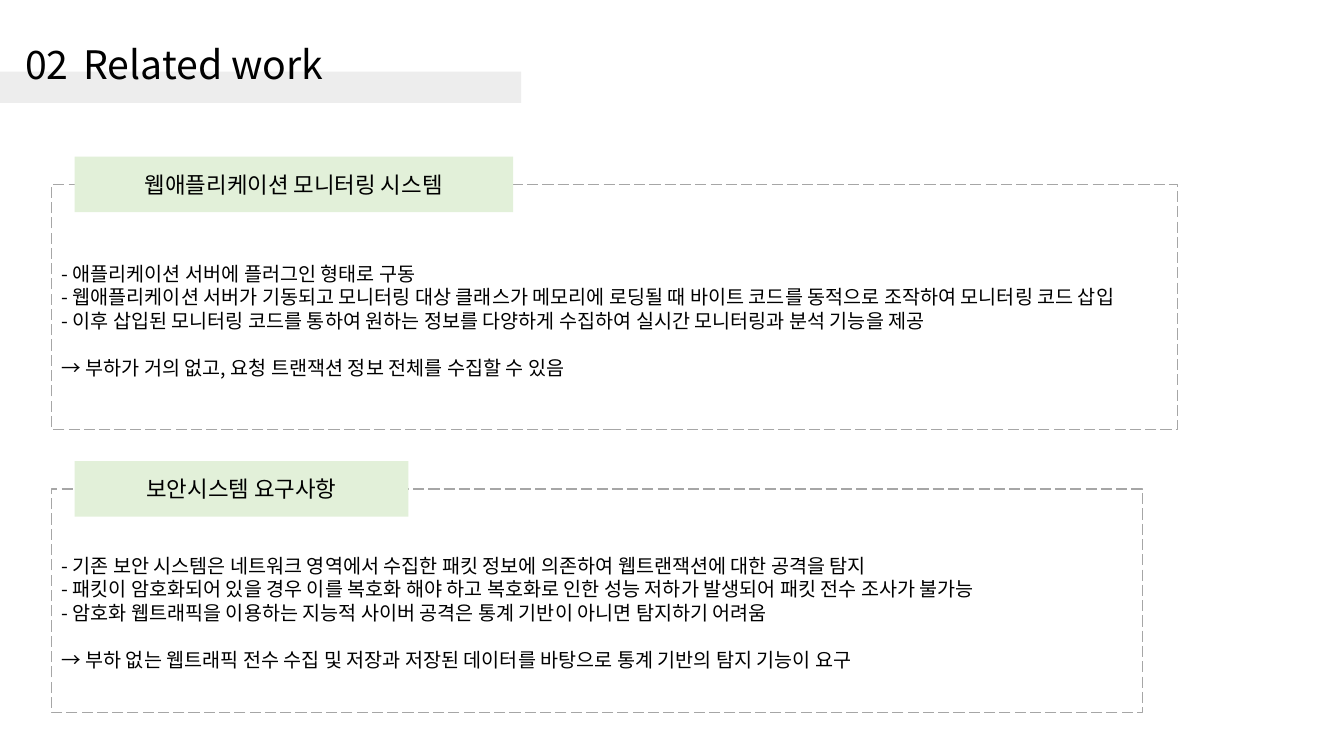
"""Build the related work slide with two labelled, dashed frames."""
from dataclasses import dataclass

import lxml.etree
import pptx
import pptx.dml.color
import pptx.enum.dml
import pptx.enum.shapes
import pptx.enum.text
import pptx.oxml.ns
import pptx.util


@dataclass(frozen=True)
class Theme:
    font: str = "Noto Sans CJK KR"
    text: str = "000000"
    bar: str = "EDEDED"
    label: str = "E2F0D9"
    frame: str = "A6A6A6"
    title_size: float = 28
    label_size: float = 16
    body_size: float = 14
    body_pitch: float = 16.8


@dataclass(frozen=True)
class Area:
    """Left, top, width and height in percent of the slide's size."""
    left: float
    top: float
    width: float
    height: float


@dataclass(frozen=True)
class Section:
    heading: str
    label_width: float
    frame: Area
    top_inset: float
    points: tuple[str, ...]
    conclusion: str


THEME = Theme()
SLIDE_WIDTH = pptx.util.Inches(13.33)
SLIDE_HEIGHT = pptx.util.Inches(7.5)
FRAME_LEFT = 3.83
LABEL_LEFT = 5.55
LABEL_HEIGHT = 7.33
TITLE_TAB = pptx.util.Inches(0.58)

SECTIONS = (
    Section(
        "웹애플리케이션 모니터링 시스템", 32.63, Area(FRAME_LEFT, 24.4, 83.8, 32.4), 0.32,
        (
            "- 애플리케이션 서버에 플러그인 형태로 구동",
            "- 웹애플리케이션 서버가 기동되고 모니터링 대상 클래스가 메모리에 로딩될 때 "
            "바이트 코드를 동적으로 조작하여 모니터링 코드 삽입",
            "- 이후 삽입된 모니터링 코드를 통하여 원하는 정보를 다양하게 수집하여 "
            "실시간 모니터링과 분석 기능을 제공",
        ),
        "→ 부하가 거의 없고, 요청 트랜잭션 정보 전체를 수집할 수 있음",
    ),
    Section(
        "보안시스템 요구사항", 24.83, Area(FRAME_LEFT, 64.67, 81.17, 29.6), 0.28,
        (
            "- 기존 보안 시스템은 네트워크 영역에서 수집한 패킷 정보에 의존하여 "
            "웹트랜잭션에 대한 공격을 탐지",
            "- 패킷이 암호화되어 있을 경우 이를 복호화 해야 하고 복호화로 인한 "
            "성능 저하가 발생되어 패킷 전수 조사가 불가능",
            "- 암호화 웹트래픽을 이용하는 지능적 사이버 공격은 통계 기반이 아니면 탐지하기 어려움",
        ),
        "→ 부하 없는 웹트래픽 전수 수집 및 저장과 저장된 데이터를 바탕으로 "
        "통계 기반의 탐지 기능이 요구",
    ),
)


def color(value: str) -> pptx.dml.color.RGBColor:
    return pptx.dml.color.RGBColor.from_string(value)


def place(area: Area) -> tuple[int, int, int, int]:
    return (
        round(SLIDE_WIDTH * area.left / 100),
        round(SLIDE_HEIGHT * area.top / 100),
        round(SLIDE_WIDTH * area.width / 100),
        round(SLIDE_HEIGHT * area.height / 100),
    )


def add_rectangle(slide, area: Area, fill: str | None = None, line: str | None = None):
    shape = slide.shapes.add_shape(pptx.enum.shapes.MSO_SHAPE.RECTANGLE, *place(area))
    shape.shadow.inherit = False
    if fill:
        shape.fill.solid()
        shape.fill.fore_color.rgb = color(fill)
    else:
        shape.fill.background()
    if line:
        shape.line.color.rgb = color(line)
        shape.line.width = pptx.util.Pt(1)
        shape.line.dash_style = pptx.enum.dml.MSO_LINE.LONG_DASH
    else:
        shape.line.fill.background()
    return shape


def add_text(paragraph, text: str, *, size: float, centered: bool = False,
             pitch: float | None = None, before: float = 0, tab: int | None = None) -> None:
    alignment = pptx.enum.text.PP_ALIGN
    paragraph.alignment = alignment.CENTER if centered else alignment.LEFT
    if pitch:
        paragraph.line_spacing = pptx.util.Pt(pitch)
    if before:
        paragraph.space_before = pptx.util.Pt(before)
    name = pptx.oxml.ns.qn
    if tab:
        properties = paragraph._p.get_or_add_pPr()
        stops = lxml.etree.SubElement(properties, name("a:tabLst"))
        lxml.etree.SubElement(stops, name("a:tab"), pos=str(tab), algn="l")
    run = paragraph.add_run()
    run.text = text
    run.font.size = pptx.util.Pt(size)
    run.font.name = THEME.font
    run.font.color.rgb = color(THEME.text)
    east_asian = lxml.etree.SubElement(run.font._element, name("a:ea"))
    east_asian.set("typeface", THEME.font)


def prepare_frame(shape):
    frame = shape.text_frame
    frame.word_wrap = True
    frame.vertical_anchor = pptx.enum.text.MSO_ANCHOR.MIDDLE
    return frame


def add_title(slide) -> None:
    add_rectangle(slide, Area(0, 9.47, 38.78, 4.13), fill=THEME.bar)
    box = slide.shapes.add_textbox(*place(Area(1.13, 2, 36.31, 12.93)))
    add_text(prepare_frame(box).paragraphs[0], "02\tRelated work",
             size=THEME.title_size, tab=TITLE_TAB)


def add_section(slide, section: Section) -> None:
    body = prepare_frame(add_rectangle(slide, section.frame, line=THEME.frame))
    body.margin_top = pptx.util.Inches(section.top_inset)
    for index, point in enumerate(section.points):
        paragraph = body.add_paragraph() if index else body.paragraphs[0]
        add_text(paragraph, point, size=THEME.body_size, pitch=THEME.body_pitch)
    add_text(body.add_paragraph(), section.conclusion, size=THEME.body_size,
             pitch=THEME.body_pitch, before=THEME.body_pitch)

    label_area = Area(LABEL_LEFT, section.frame.top - LABEL_HEIGHT / 2,
                      section.label_width, LABEL_HEIGHT)
    label = add_rectangle(slide, label_area, fill=THEME.label)
    add_text(prepare_frame(label).paragraphs[0], section.heading,
             size=THEME.label_size, centered=True)


def main() -> None:
    presentation = pptx.Presentation()
    presentation.slide_width = SLIDE_WIDTH
    presentation.slide_height = SLIDE_HEIGHT
    slide = presentation.slides.add_slide(presentation.slide_layouts[6])
    add_title(slide)
    for section in SECTIONS:
        add_section(slide, section)
    presentation.save("out.pptx")


if __name__ == "__main__":
    main()
